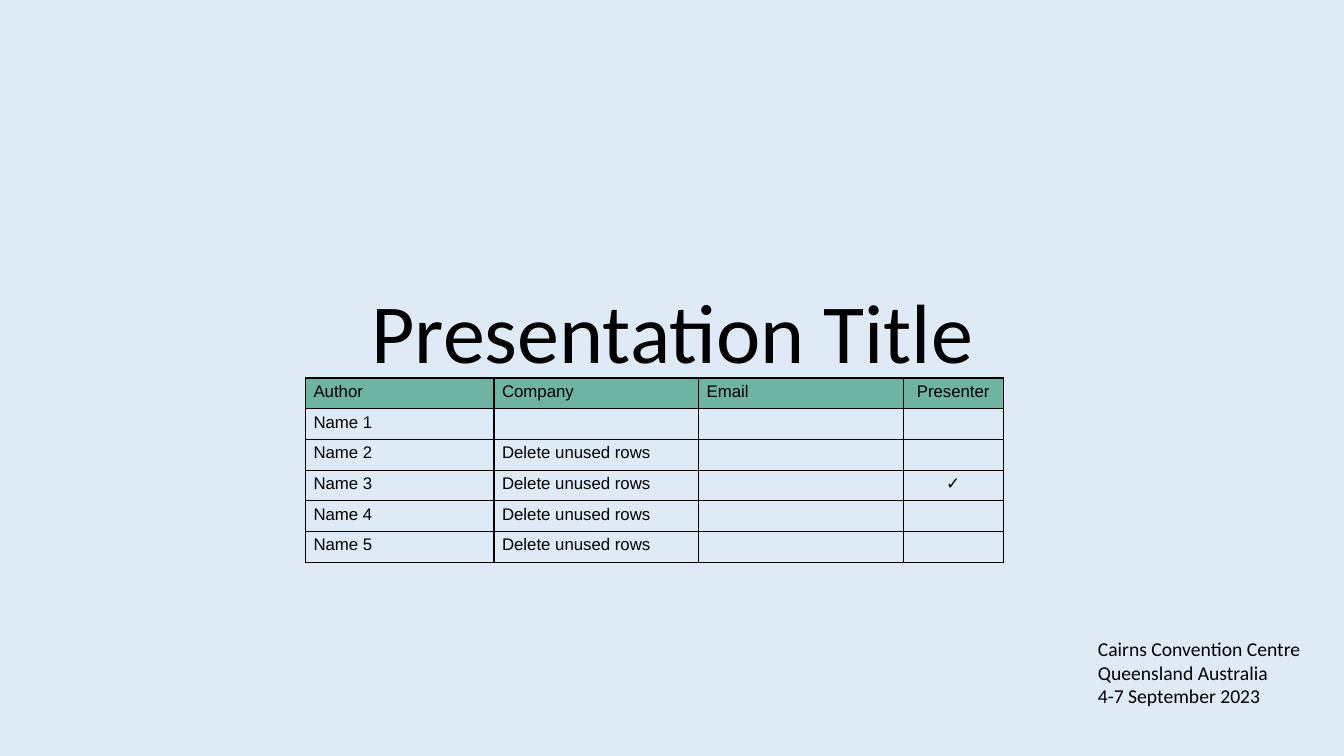
import lxml.etree
import pptx
import pptx.dml.color
import pptx.enum.text
import pptx.oxml.ns
import pptx.util

Inches = pptx.util.Inches
RGBColor = pptx.dml.color.RGBColor
qn = pptx.oxml.ns.qn
ALIGN = pptx.enum.text.PP_ALIGN
ANCHOR = pptx.enum.text.MSO_ANCHOR

BACKGROUND = RGBColor(0xDE, 0xEB, 0xF7)
BLACK = RGBColor(0, 0, 0)
GREEN = RGBColor(0x00, 0x7E, 0x4F)

TITLE_FONT = {"name": "Calibri", "size": pptx.util.Pt(60), "bold": False}
VENUE_FONT = {"name": "Calibri", "size": pptx.util.Pt(14)}
TABLE_FONT = {"name": "Arial", "size": pptx.util.Pt(12), "bold": False}
CELL_MARGINS = {
    "margin_left": Inches(0.08),
    "margin_right": Inches(0.08),
    "margin_top": Inches(0.04),
    "margin_bottom": Inches(0.04),
}

COLUMN_WIDTHS = [1.87, 2.03, 2.03, 0.99]
UNUSED = "Delete unused rows"
AUTHORS = [
    ["Author", "Company", "Email", "Presenter"],
    ["Name 1", "", "", ""],
    ["Name 2", UNUSED, "", ""],
    ["Name 3", UNUSED, "", "✓"],
    ["Name 4", UNUSED, "", ""],
    ["Name 5", UNUSED, "", ""],
]
VENUE = ["Cairns Convention Centre", "Queensland Australia", "4-7 September 2023"]


def set_values(target, values):
    """Set every attribute named in values on the target."""
    for name, value in values.items():
        setattr(target, name, value)


def write_run(paragraph, text, font):
    """Add black text with the given font values to a paragraph."""
    run = paragraph.add_run()
    run.text = text
    set_values(run.font, font)
    run.font.color.rgb = BLACK


def add_borders(cell):
    """Draw a thin black line on all four sides of a cell."""
    properties = cell._tc.get_or_add_tcPr()
    for side in ("a:lnL", "a:lnR", "a:lnT", "a:lnB"):
        line = lxml.etree.SubElement(properties, qn(side), w=str(pptx.util.Pt(1)))
        fill = lxml.etree.SubElement(line, qn("a:solidFill"))
        lxml.etree.SubElement(fill, qn("a:srgbClr"), val=str(BLACK))


def fill_header(cell):
    """Fill a header cell with half transparent green."""
    cell.fill.solid()
    cell.fill.fore_color.rgb = GREEN
    color = cell._tc.tcPr.find(qn("a:solidFill")).find(qn("a:srgbClr"))
    lxml.etree.SubElement(color, qn("a:alpha"), val="50000")


def add_title(slide, left, top, width, height):
    """Place the title placeholder in the given box."""
    title = slide.shapes.title
    set_values(title, {"left": left, "top": top, "width": width, "height": height})
    set_values(title.text_frame, {"word_wrap": True, "vertical_anchor": ANCHOR.BOTTOM})
    paragraph = title.text_frame.paragraphs[0]
    set_values(paragraph, {"alignment": ALIGN.CENTER, "line_spacing": 0.9})
    write_run(paragraph, "Presentation Title", TITLE_FONT)


def add_venue(slide, left, top, width, height):
    """Write the place and date of the event in the given box."""
    frame = slide.shapes.add_textbox(left, top, width, height).text_frame
    frame.word_wrap = True
    for index, text in enumerate(VENUE):
        paragraph = frame.add_paragraph() if index else frame.paragraphs[0]
        write_run(paragraph, text, VENUE_FONT)


def add_authors(slide, left, top, width, height):
    """Build the table of authors in the given box."""
    table = slide.shapes.add_table(
        len(AUTHORS), len(COLUMN_WIDTHS), left, top, width, height
    ).table
    set_values(table, {"first_row": False, "horz_banding": False})
    for column, share in zip(table.columns, COLUMN_WIDTHS):
        column.width = int(width * share / sum(COLUMN_WIDTHS))
    for row_index, row in enumerate(AUTHORS):
        for column_index, text in enumerate(row):
            cell = table.cell(row_index, column_index)
            set_values(cell, CELL_MARGINS)
            add_borders(cell)
            if row_index == 0:
                fill_header(cell)
            else:
                cell.fill.background()
            paragraph = cell.text_frame.paragraphs[0]
            if column_index == len(row) - 1:
                paragraph.alignment = ALIGN.CENTER
            if text:
                write_run(paragraph, text, TABLE_FONT)
            else:
                lxml.etree.SubElement(paragraph._p, qn("a:endParaRPr"), sz="1200")


def build_title_slide(presentation):
    """Add the opening slide with title, authors and venue."""
    slide = presentation.slides.add_slide(presentation.slide_layouts[0])
    slide.background.fill.solid()
    slide.background.fill.fore_color.rgb = BACKGROUND
    subtitle = slide.placeholders[1].element
    subtitle.getparent().remove(subtitle)
    add_venue(slide, Inches(10.79), Inches(6.27), Inches(2.34), Inches(0.81))
    add_title(slide, Inches(1.67), Inches(2.69), Inches(10), Inches(1.15))
    add_authors(slide, Inches(3.03), Inches(3.75), Inches(6.92), Inches(1.83))


def main():
    """Create and save the presentation."""
    presentation = pptx.Presentation()
    presentation.slide_width = Inches(13.33)
    presentation.slide_height = Inches(7.5)
    build_title_slide(presentation)
    presentation.save("out.pptx")


if __name__ == "__main__":
    main()
